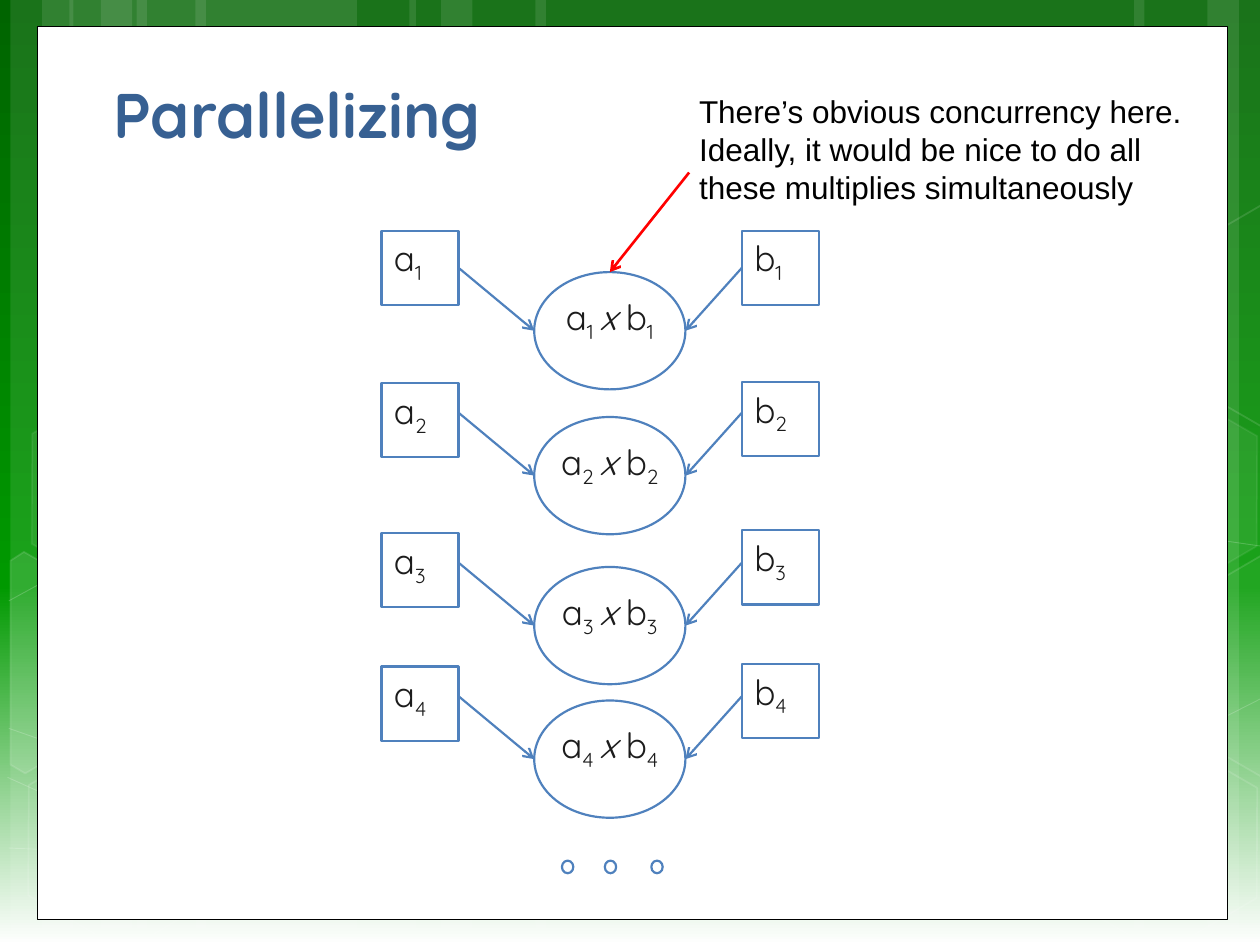
"""Build the Parallelizing slide: pairwise products that can run at the same time."""
import pptx
import pptx.dml.color
import pptx.enum.shapes
import pptx.enum.text
import pptx.oxml.ns
import pptx.util

Pt = pptx.util.Pt
qn = pptx.oxml.ns.qn
SHAPE = pptx.enum.shapes.MSO_SHAPE
ALIGN = pptx.enum.text.PP_ALIGN
ANCHOR = pptx.enum.text.MSO_ANCHOR

COLORS = {
    "dark_green": "006400", "green": "009900", "white": "FFFFFF", "black": "000000",
    "title": "376092", "text": "1C1C1C", "outline": "4F81BD", "red": "FF0000",
}
FORMATS = {
    "title": {"name": "Quicksand", "size": Pt(36), "bold": True},
    "label": {"name": "Quicksand", "size": Pt(20)},
    "note": {"name": "Arial", "size": Pt(18)},
}
STRIPS = [(78, 126), (6, 36), (24, 60), (111.6, 126), (39.6, 36), (57.6, 60),
          (528, 126), (690, 36), (648, 60), (306, 222), (234, 36), (252, 60)]
CURVE_ENDS = [(5, 484.6, 21.6, 485.3), (701.3, 409, 720, 399.5), (5, 343.4, 21.6, 334.3),
              (701.3, 309.3, 720, 312), (4.3, 444.2, 21.6, 452), (5, 416.2, 21.6, 422)]
HEXAGONS = [(8, 425.5, 0, 12), (10, 224.6, 7, 8), (600.5, 427, 0, 12), (600.5, 226, 7, 8)]
LEFT_CUT_HEXAGON = [(6, 320.4), (13.7, 315.4), (69, 347), (68.4, 410.4), (14.4, 442), (6, 437)]
RIGHT_CUT_HEXAGON = [(666.7, 349), (720.7, 317.5), (726.5, 321),
                     (726.5, 441.4), (721.4, 444.2), (666.7, 412.6)]
ROWS = [(131.8, 131.8, 155.5), (218.9, 218.2, 238.3),
        (304.6, 303.1, 324), (380.9, 379.4, 400.3)]
A_LEFT, B_LEFT, BOX_WIDTH, BOX_HEIGHT = 218, 424, 44, 42.4
OVAL_LEFT, OVAL_WIDTH, OVAL_HEIGHT = 305.3, 86.4, 67
ARROW_DROP = 36


def rgb(name):
    """Return the named colour."""
    return pptx.dml.color.RGBColor.from_string(COLORS[name])


def set_alpha(shape, location, percent):
    """Make the solid colour at a location in the shape properties translucent."""
    color = shape.element.spPr.find(location + qn("a:solidFill") + "/" + qn("a:srgbClr"))
    color.append(color.makeelement(qn("a:alpha"), {"val": str(percent * 1000)}))


def style_shape(shape, fill="white", line="outline", weight=1.25, fill_alpha=100, line_alpha=100):
    """Give a shape its fill and outline; zero opacity means no fill."""
    shape.shadow.inherit = False
    if fill_alpha:
        shape.fill.solid()
        shape.fill.fore_color.rgb = rgb(fill)
        if fill_alpha < 100:
            set_alpha(shape, "", fill_alpha)
    else:
        shape.fill.background()
    if line:
        shape.line.color.rgb = rgb(line)
        shape.line.width = Pt(weight)
        if line_alpha < 100:
            set_alpha(shape, qn("a:ln") + "/", line_alpha)
    else:
        shape.line.fill.background()
    return shape


def add_shape(slide, kind, left, top, width, height, **style):
    """Add a styled preset shape."""
    shape = slide.shapes.add_shape(kind, Pt(left), Pt(top), Pt(width), Pt(height))
    return style_shape(shape, **style)


def add_polygon(slide, points, **style):
    """Add a closed outline through the points."""
    builder = slide.shapes.build_freeform(Pt(points[0][0]), Pt(points[0][1]))
    builder.add_line_segments([(Pt(x), Pt(y)) for x, y in points[1:]], close=True)
    return style_shape(builder.convert_to_shape(), **style)


def add_line(slide, start_x, start_y, end_x, end_y, color="outline", weight=1.25, arrow=True):
    """Add a straight connector, with an open arrowhead if wanted."""
    line = slide.shapes.add_connector(pptx.enum.shapes.MSO_CONNECTOR.STRAIGHT,
                                      Pt(start_x), Pt(start_y), Pt(end_x), Pt(end_y))
    line.line.color.rgb = rgb(color)
    line.line.width = Pt(weight)
    properties = line.element.spPr
    if arrow:
        outline = properties.find(qn("a:ln"))
        outline.append(outline.makeelement(qn("a:tailEnd"), {"type": "arrow"}))
    properties.append(properties.makeelement(qn("a:effectLst"), {}))
    return line


def format_run(run, style, color):
    """Apply a named text format and colour to a run."""
    for attribute, value in FORMATS[style].items():
        setattr(run.font, attribute, value)
    run.font.color.rgb = rgb(color)


def write_label(shape, parts, alignment=ALIGN.LEFT):
    """Write (text, kind) parts, where kind is normal, sub or italic."""
    shape.text_frame.vertical_anchor = ANCHOR.TOP
    paragraph = shape.text_frame.paragraphs[0]
    paragraph.alignment = alignment
    for text, kind in parts:
        run = paragraph.add_run()
        run.text = text
        format_run(run, "label", "text")
        if kind == "sub":
            run.font._element.set("baseline", "-25000")
        elif kind == "italic":
            run.font.italic = True


def add_text(slide, text, left, top, width, height, style, color, anchor, wrap):
    """Add a text box in one format."""
    box = slide.shapes.add_textbox(Pt(left), Pt(top), Pt(width), Pt(height))
    frame = box.text_frame
    frame.word_wrap = wrap
    frame.vertical_anchor = anchor
    paragraph = frame.paragraphs[0]
    paragraph.text = text
    for run in paragraph.runs:
        format_run(run, style, color)


def paint_background(slide):
    """Fill the background with a vertical three-stop gradient."""
    fill = slide.background.fill
    fill.gradient()
    fill.gradient_angle = 270
    stops = slide.element.find(".//" + qn("a:gsLst"))
    for stop in list(stops):
        stops.remove(stop)
    for position, name in ((0, "dark_green"), (62, "green"), (100, "white")):
        stop = stops.makeelement(qn("a:gs"), {"pos": str(position * 1000)})
        stop.append(stop.makeelement(qn("a:srgbClr"), {"val": COLORS[name]}))
        stops.append(stop)


def add_backdrop(slide):
    """Add translucent strips, curve ends and hexagons, and the white panel over them."""
    for left, width in STRIPS:
        add_shape(slide, SHAPE.RECTANGLE, left, 0, width, 540, line=None, fill_alpha=10)
    for ends in CURVE_ENDS:
        line = add_line(slide, *ends, color="white", weight=0.5, arrow=False)
        set_alpha(line, qn("a:ln") + "/", 20)
    for left, top, fill_alpha, line_alpha in HEXAGONS:
        hexagon = add_shape(slide, SHAPE.HEXAGON, left, top, 126, 109.4, line="white",
                            weight=1, fill_alpha=fill_alpha, line_alpha=line_alpha)
        hexagon.adjustments[0] = 0.285
        hexagon.rotation = 30
    upper = [(x, y - 200.2) for x, y in RIGHT_CUT_HEXAGON]
    for points, alpha in ((LEFT_CUT_HEXAGON, 10), (RIGHT_CUT_HEXAGON, 4), (upper, 0)):
        add_polygon(slide, points, line="white", weight=1, fill_alpha=alpha, line_alpha=12)
    add_shape(slide, SHAPE.RECTANGLE, 21.6, 15.1, 679.7, 510.5, line="black", weight=0.5)


def add_product(slide, number, a_top, b_top, oval_top):
    """Add one pair of inputs with arrows to their product, and return the oval."""
    oval = add_shape(slide, SHAPE.OVAL, OVAL_LEFT, oval_top, OVAL_WIDTH, OVAL_HEIGHT)
    oval.text_frame.margin_left = oval.text_frame.margin_right = 0
    write_label(oval, [("a", "normal"), (f"{number} ", "sub"), ("x", "italic"),
                       (" b", "normal"), (f"{number}", "sub")], ALIGN.CENTER)
    middle = oval_top + OVAL_HEIGHT / 2
    start_y = middle - ARROW_DROP
    sides = (("a", A_LEFT, a_top, A_LEFT + BOX_WIDTH, OVAL_LEFT, 3),
             ("b", B_LEFT, b_top, B_LEFT, OVAL_LEFT + OVAL_WIDTH, 1))
    for letter, left, top, start_x, end_x, site in sides:
        box = add_shape(slide, SHAPE.RECTANGLE, left, top, BOX_WIDTH, BOX_HEIGHT)
        write_label(box, [(letter, "normal"), (f"{number}", "sub")])
        arrow = add_line(slide, start_x, start_y, end_x, middle)
        if abs(top + BOX_HEIGHT / 2 - start_y) < 0.5:
            arrow.begin_connect(box, site)
    return oval


def main():
    """Build and save the slide."""
    presentation = pptx.Presentation()
    presentation.slide_width, presentation.slide_height = Pt(720), Pt(540)
    slide = presentation.slides.add_slide(presentation.slide_layouts[6])
    paint_background(slide)
    add_backdrop(slide)
    add_text(slide, "Parallelizing", 57.6, 35.3, 606, 54.7, "title", "title", ANCHOR.BOTTOM, True)
    ovals = [add_product(slide, number, *tops) for number, tops in enumerate(ROWS, 1)]
    for left in (321.1, 345.6, 372.2):
        add_shape(slide, SHAPE.OVAL, left, 491.8, 6.5, 7.2)
    pointer = add_line(slide, 393.8, 98.6, 348.5, 155.5, color="red", weight=1.5)
    pointer.end_connect(ovals[0], 0)
    note = "\v".join(["There’s obvious concurrency here.", "Ideally, it would be nice to do all",
                      "these multiplies simultaneously"])
    add_text(slide, note, 392.4, 49, 293, 72.7, "note", "black", ANCHOR.TOP, False)
    presentation.save("out.pptx")


if __name__ == "__main__":
    main()
